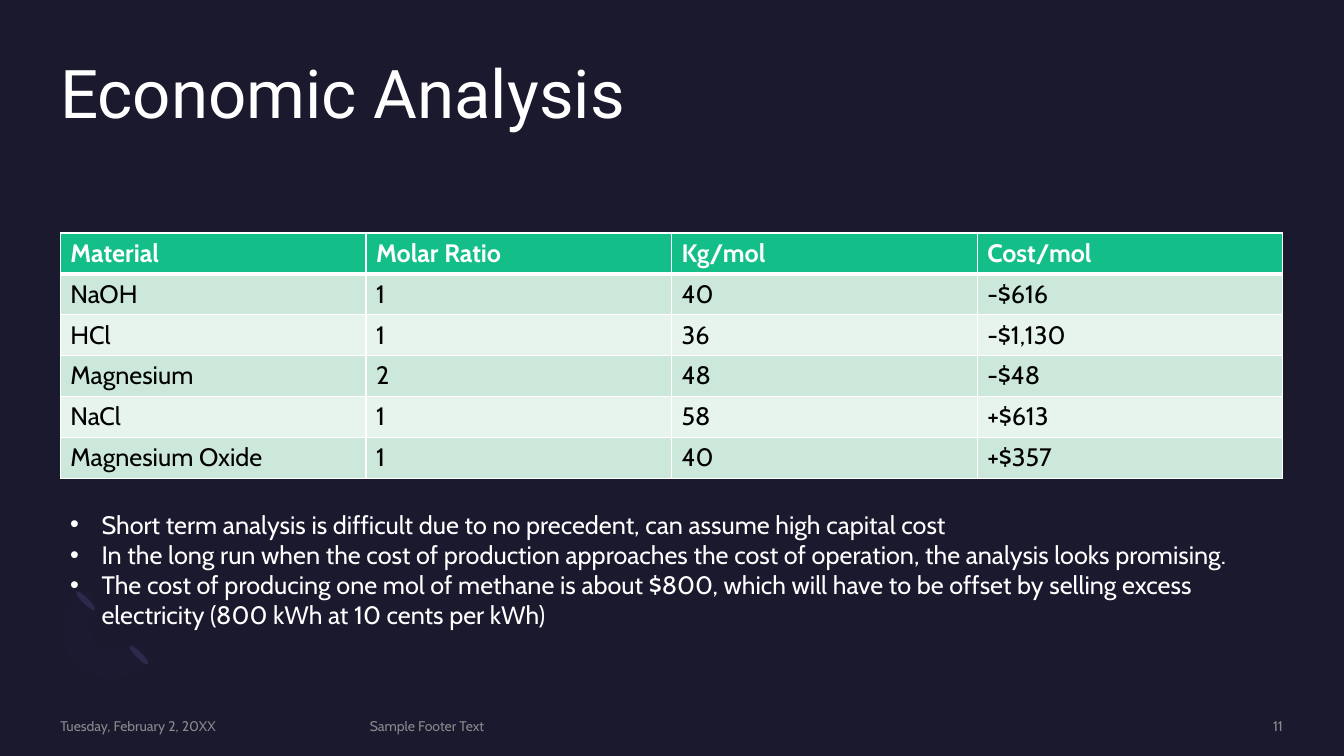
"""Build the Economic Analysis slide with its cost table and conclusions."""
import pptx
import pptx.util
import pptx.dml.color
import pptx.enum.shapes
import pptx.enum.text
import pptx.oxml.ns
from lxml import etree

Cm = pptx.util.Cm
Pt = pptx.util.Pt
RGB = pptx.dml.color.RGBColor.from_string
qn = pptx.oxml.ns.qn
ANCHOR = pptx.enum.text.MSO_ANCHOR
ALIGN = pptx.enum.text.PP_ALIGN

theme = {
    "background": "1B192E", "white": "FFFFFF", "black": "000000",
    "footer": "A6A6A6", "petal": "2C284A", "arc": "7771B2",
    "header": "13BE89", "bands": ("CCE8DA", "E7F4ED"),
    "title_font": "Roboto", "body_font": "Cabin",
    "title_size": 48, "body_size": 18, "footer_size": 10,
}


def write(p, text, size, color, font=theme["body_font"], bold=False):
    r = p.add_run()
    r.text = text
    for name, value in {"size": Pt(size), "name": font, "bold": bold}.items():
        setattr(r.font, name, value)
    r.font.color.rgb = RGB(color)
    return r


def add_text_frame(left, top, width, height, **formats):
    tf = s.shapes.add_textbox(Cm(left), Cm(top), Cm(width), Cm(height)).text_frame
    for name, value in {"word_wrap": True, **formats}.items():
        setattr(tf, name, value)
    return tf


prs = pptx.Presentation()
prs.slide_width, prs.slide_height = Cm(33.87), Cm(19.05)
s = prs.slides.add_slide(prs.slide_layouts[6])
s.background.fill.solid()
s.background.fill.fore_color.rgb = RGB(theme["background"])

for left, top in ((3.43, 16.18), (2.08, 14.81)):
    sp = s.shapes.add_shape(pptx.enum.shapes.MSO_SHAPE.OVAL,
                            Cm(left), Cm(top), Cm(0.15), Cm(0.66))
    sp.rotation = 135
    sp.shadow.inherit = False
    sp.fill.solid()
    sp.fill.fore_color.rgb = RGB(theme["petal"])
    sp.line.fill.background()

arc_curves = (
    ((1.93, 16.74), (1.42, 16.23), (1.47, 15.37), (2.06, 14.78)),
    ((2.51, 15.24), (2.21, 15.52), (2.18, 15.98), (2.44, 16.21)),
    ((2.44, 16.21), (2.69, 16.46), (3.12, 16.43), (3.43, 16.15)),
    ((3.86, 16.61), (3.30, 17.17), (2.41, 17.25), (1.93, 16.74)),
)
arc_points = []
for curve in arc_curves:
    for step in range(13):
        t = step / 12
        weights = ((1 - t) ** 3, 3 * t * (1 - t) ** 2, 3 * t * t * (1 - t), t ** 3)
        arc_points.append(tuple(
            Cm(sum(w * point[axis] for w, point in zip(weights, curve)))
            for axis in (0, 1)))
builder = s.shapes.build_freeform(*arc_points[0])
builder.add_line_segments(arc_points[1:], close=True)
sp = builder.convert_to_shape()
sp.shadow.inherit = False
sp.fill.solid()
sp.fill.fore_color.rgb = RGB(theme["arc"])
sp.line.fill.background()
arc_color = sp.fill._xPr.find(qn("a:solidFill"))[0]
etree.SubElement(arc_color, qn("a:alpha"), val="2000")

no_margins = dict.fromkeys(
    ("margin_left", "margin_top", "margin_right", "margin_bottom"), 0)
tf = add_text_frame(1.52, 1.52, 30.81, 3.71, **no_margins)
p = tf.paragraphs[0]
p.line_spacing = 0.9
write(p, "Economic Analysis", theme["title_size"], theme["white"], theme["title_font"])

footers = (
    (1.52, 7.32, "Tuesday, February 2, 20XX", ALIGN.LEFT),
    (9.32, 17.73, "Sample Footer Text", ALIGN.LEFT),
    (27.63, 4.7, "11", ALIGN.RIGHT),
)
for left, width, text, alignment in footers:
    tf = add_text_frame(left, 18.08, width, 0.43,
                        vertical_anchor=ANCHOR.MIDDLE, **no_margins)
    p = tf.paragraphs[0]
    p.alignment = alignment
    r = write(p, text, theme["footer_size"], theme["footer"])
    footer_color = r.font._rPr.find(qn("a:solidFill"))[0]
    etree.SubElement(footer_color, qn("a:alpha"), val="80000")

materials = (
    ("Material", "Molar Ratio", "Kg/mol", "Cost/mol"),
    ("NaOH", "1", "40", "-$616"),
    ("HCl", "1", "36", "-$1,130"),
    ("Magnesium", "2", "48", "-$48"),
    ("NaCl", "1", "58", "+$613"),
    ("Magnesium Oxide", "1", "40", "+$357"),
)
table = s.shapes.add_table(len(materials), len(materials[0]), Cm(1.52), Cm(5.87),
                           Cm(30.81), Cm(6.18)).table
for row, values in enumerate(materials):
    is_header = row == 0
    fill = theme["header"] if is_header else theme["bands"][(row - 1) % 2]
    color = theme["white"] if is_header else theme["black"]
    for column, text in enumerate(values):
        cell = table.cell(row, column)
        write(cell.text_frame.paragraphs[0], text, theme["body_size"], color,
              bold=is_header)
        tcPr = cell._tc.get_or_add_tcPr()
        for side in "LRTB":
            thick = (row, side) in ((0, "B"), (1, "T"))
            ln = etree.SubElement(tcPr, qn(f"a:ln{side}"), w=str(Pt(3 if thick else 1)))
            solid = etree.SubElement(ln, qn("a:solidFill"))
            etree.SubElement(solid, qn("a:srgbClr"), val=theme["white"])
        cell.fill.solid()
        cell.fill.fore_color.rgb = RGB(fill)

conclusions = (
    "Short term analysis is difficult due to no precedent, can assume high capital cost",
    "In the long run when the cost of production approaches the cost of operation, "
    "the analysis looks promising.",
    "The cost of producing one mol of methane is about $800, which will have to be "
    "offset by selling excess electricity (800 kWh at 10 cents per kWh)",
)
tf = add_text_frame(1.52, 12.7, 30.35, 3.33)
for i, text in enumerate(conclusions):
    p = tf.add_paragraph() if i else tf.paragraphs[0]
    write(p, text, theme["body_size"], theme["white"])
    pPr = p._p.get_or_add_pPr()
    for name, value in {"marL": Cm(0.79), "indent": -Cm(0.79)}.items():
        pPr.set(name, str(value))
    etree.SubElement(pPr, qn("a:buFont"), typeface="Arial")
    etree.SubElement(pPr, qn("a:buChar"), char="•")

prs.save("out.pptx")
